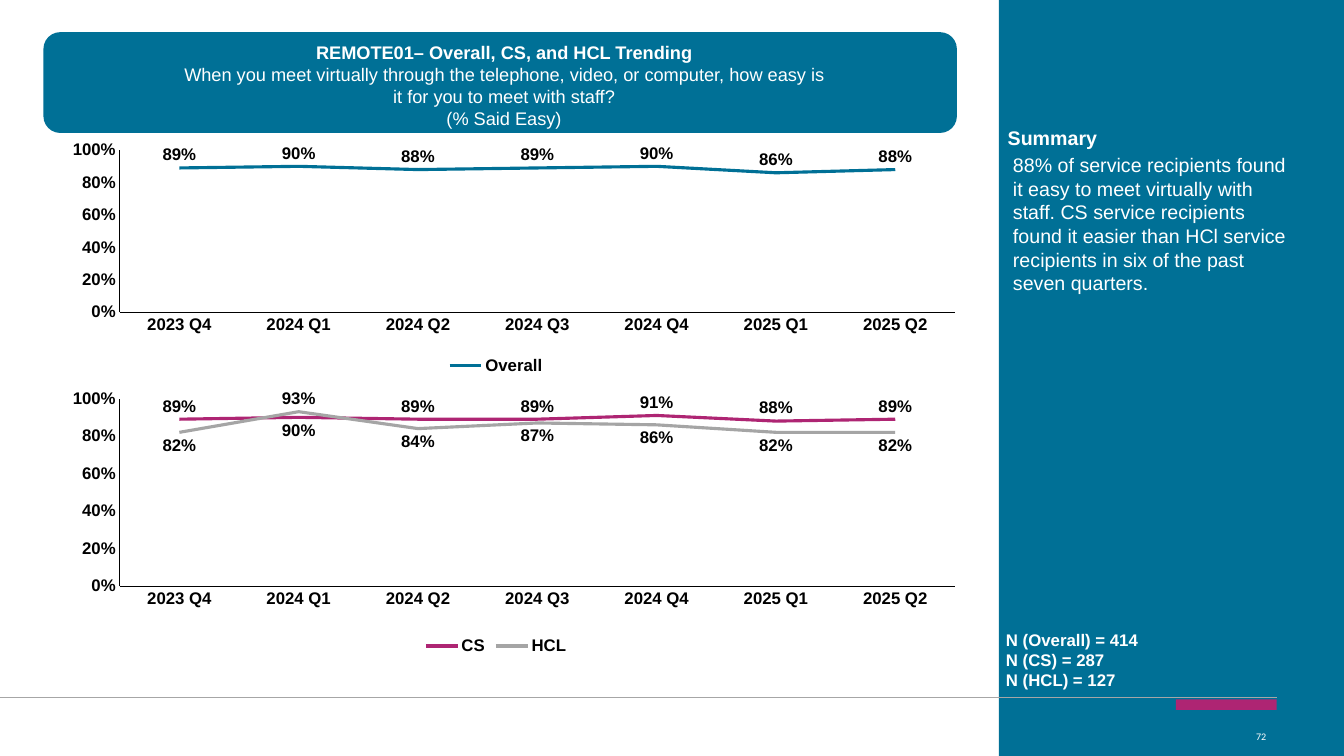
from dataclasses import dataclass

from lxml.etree import SubElement
from pptx import Presentation
from pptx.chart.data import CategoryChartData
from pptx.dml.color import RGBColor
from pptx.enum.chart import (XL_CHART_TYPE, XL_LABEL_POSITION,
                             XL_LEGEND_POSITION, XL_MARKER_STYLE, XL_TICK_MARK)
from pptx.enum.shapes import MSO_CONNECTOR, MSO_SHAPE
from pptx.enum.text import MSO_ANCHOR, MSO_AUTO_SIZE, PP_ALIGN
from pptx.oxml import parse_xml
from pptx.oxml.ns import nsdecls, qn
from pptx.util import Pt


@dataclass(frozen=True)
class Theme:
    teal: str = "007096"
    pink: str = "AE2573"
    gray: str = "A5A5A5"
    rule: str = "A6A6A6"
    white: str = "FFFFFF"
    black: str = "000000"
    font: str = "Arial"
    head: float = 13
    body: float = 14
    small: float = 12
    page: float = 9


THEME = Theme()
QUARTERS = ["2023 Q4", "2024 Q1", "2024 Q2", "2024 Q3",
            "2024 Q4", "2025 Q1", "2025 Q2"]
UP, DOWN = XL_LABEL_POSITION.ABOVE, XL_LABEL_POSITION.BELOW


def place(box):
    return [Pt(v) for v in box]


def style(font, size, color, bold=False, face=THEME.font):
    font.name, font.size, font.bold = face, Pt(size), bold
    font.color.rgb = RGBColor.from_string(color)


def add_block(slide, kind, box, color):
    block = slide.shapes.add_shape(kind, *place(box))
    block.shadow.inherit = False
    block.fill.solid()
    block.fill.fore_color.rgb = RGBColor.from_string(color)
    block.line.fill.background()


def add_rule(slide, start, end):
    rule = slide.shapes.add_connector(MSO_CONNECTOR.STRAIGHT,
                                      *place(start + end))
    rule.line.color.rgb = RGBColor.from_string(THEME.rule)
    rule.line.width = Pt(0.75)
    SubElement(rule.element.spPr, qn("a:effectLst"))


def add_text(slide, box, text, size, bold=False, face=THEME.font):
    frame = slide.shapes.add_textbox(*place(box)).text_frame
    frame.word_wrap = True
    frame.text = text
    for para in frame.paragraphs:
        for run in para.runs:
            style(run.font, size, THEME.white, bold, face)
    return frame


def set_title(slide, box, lead, rest):
    title = slide.shapes.title
    title.left, title.top, title.width, title.height = place(box)
    # Bring the title in front of its card
    title.element.getparent().append(title.element)
    frame = title.text_frame
    frame.word_wrap = True
    frame.auto_size = MSO_AUTO_SIZE.NONE
    frame.vertical_anchor = MSO_ANCHOR.TOP
    para = frame.paragraphs[0]
    para.text = "\v".join([lead] + rest)
    para.alignment = PP_ALIGN.CENTER
    for i, run in enumerate(para.runs):
        style(run.font, THEME.head, THEME.white, i == 0)


def set_plot(chart, x, y, w, h):
    area = chart.element.chart.plotArea
    for old in area.findall(qn("c:layout")):
        area.remove(old)
    area.insert(0, parse_xml(
        f'<c:layout {nsdecls("c")}><c:manualLayout>'
        '<c:layoutTarget val="inner"/>'
        '<c:xMode val="edge"/><c:yMode val="edge"/>'
        f'<c:x val="{x}"/><c:y val="{y}"/><c:w val="{w}"/><c:h val="{h}"/>'
        '</c:manualLayout></c:layout>'))


def set_axis(axis):
    axis.has_major_gridlines = False
    axis.major_tick_mark = axis.minor_tick_mark = XL_TICK_MARK.NONE
    axis.format.line.color.rgb = RGBColor.from_string(THEME.black)
    axis.format.line.width = Pt(0.75)


def set_line(line, color, spot, swap):
    line.smooth = False
    line.marker.style = XL_MARKER_STYLE.NONE
    line.format.line.color.rgb = RGBColor.from_string(color)
    line.format.line.width = Pt(2.25)
    tags = line.data_labels
    tags.show_value = True
    tags.number_format, tags.number_format_is_linked = "0%", False
    tags.position = spot
    style(tags.font, THEME.small, THEME.black, True)
    # Flip the label where the two lines cross
    if swap is not None:
        tag = line.points[swap].data_label
        style(tag.font, THEME.small, THEME.black, True)
        tag.position = DOWN if spot == UP else UP


def add_trend(slide, box, tall, lines, swap=None):
    data = CategoryChartData(number_format="0%")
    data.categories = QUARTERS
    for name, _, _, rates in lines:
        data.add_series(name, [rate / 100 for rate in rates])
    chart = slide.shapes.add_chart(XL_CHART_TYPE.LINE, *place(box), data).chart
    style(chart.font, THEME.small, THEME.black, True)
    chart.has_title = False
    chart.has_legend = True
    chart.legend.position = XL_LEGEND_POSITION.BOTTOM
    chart.legend.include_in_layout = False
    set_plot(chart, 0.09, 0.07, 0.91, tall)
    set_axis(chart.category_axis)
    axis = chart.value_axis
    set_axis(axis)
    axis.minimum_scale, axis.maximum_scale, axis.major_unit = 0, 1, 0.2
    axis.tick_labels.number_format = "0%"
    axis.tick_labels.number_format_is_linked = False
    chart.plots[0].vary_by_categories = False
    for line, (_, color, spot, _) in zip(chart.plots[0].series, lines):
        set_line(line, color, spot, swap)


def add_page(slide, box, number):
    frame = add_text(slide, box, number, THEME.page, face="Calibri")
    frame.vertical_anchor = MSO_ANCHOR.MIDDLE
    para = frame.paragraphs[0]
    para.alignment = PP_ALIGN.RIGHT
    para.runs[0].font._element.set("cap", "small")


def main():
    deck = Presentation()
    deck.slide_width, deck.slide_height = Pt(960), Pt(540)
    slide = deck.slides.add_slide(deck.slide_layouts[5])

    # Frame: title card, side panel, footer
    add_block(slide, MSO_SHAPE.ROUNDED_RECTANGLE, (31, 23, 652.5, 72), THEME.teal)
    add_block(slide, MSO_SHAPE.RECTANGLE, (713.5, 0, 246.5, 540), THEME.teal)
    add_rule(slide, (0, 498), (912, 498))
    add_page(slide, (550, 514.5, 361.5, 21.5), "72")
    add_block(slide, MSO_SHAPE.RECTANGLE, (840, 499.5, 72, 7.5), THEME.pink)

    set_title(slide, (120, 26, 480, 44.5),
              "REMOTE01– Overall, CS, and HCL Trending",
              ["When you meet virtually through the telephone, video, or "
               "computer, how easy is it for you to meet with staff?",
               "(% Said Easy)"])

    # Trend charts
    add_trend(slide, (26.5, 95, 656, 175.5), 0.66, [
        ("Overall", THEME.teal, UP, (89, 90, 88, 89, 90, 86, 88))])
    add_trend(slide, (26.5, 270.75, 656, 200), 0.67, [
        ("CS", THEME.pink, UP, (89, 90, 89, 89, 91, 88, 89)),
        ("HCL", THEME.gray, DOWN, (82, 93, 84, 87, 86, 82, 82))], swap=1)

    # Side panel text
    add_text(slide, (712.75, 86.5, 247, 24.5), "Summary", THEME.body, True)
    add_text(slide, (716.5, 106, 216.5, 144.5),
             "88% of service recipients found it easy to meet virtually with "
             "staff. CS service recipients found it easier than HCl service "
             "recipients in six of the past seven quarters.", THEME.body)
    add_text(slide, (711.5, 446, 180, 51),
             "N (Overall) = 414\nN (CS) = 287\nN (HCL) = 127",
             THEME.small, True)

    deck.save("out.pptx")


if __name__ == "__main__":
    main()
